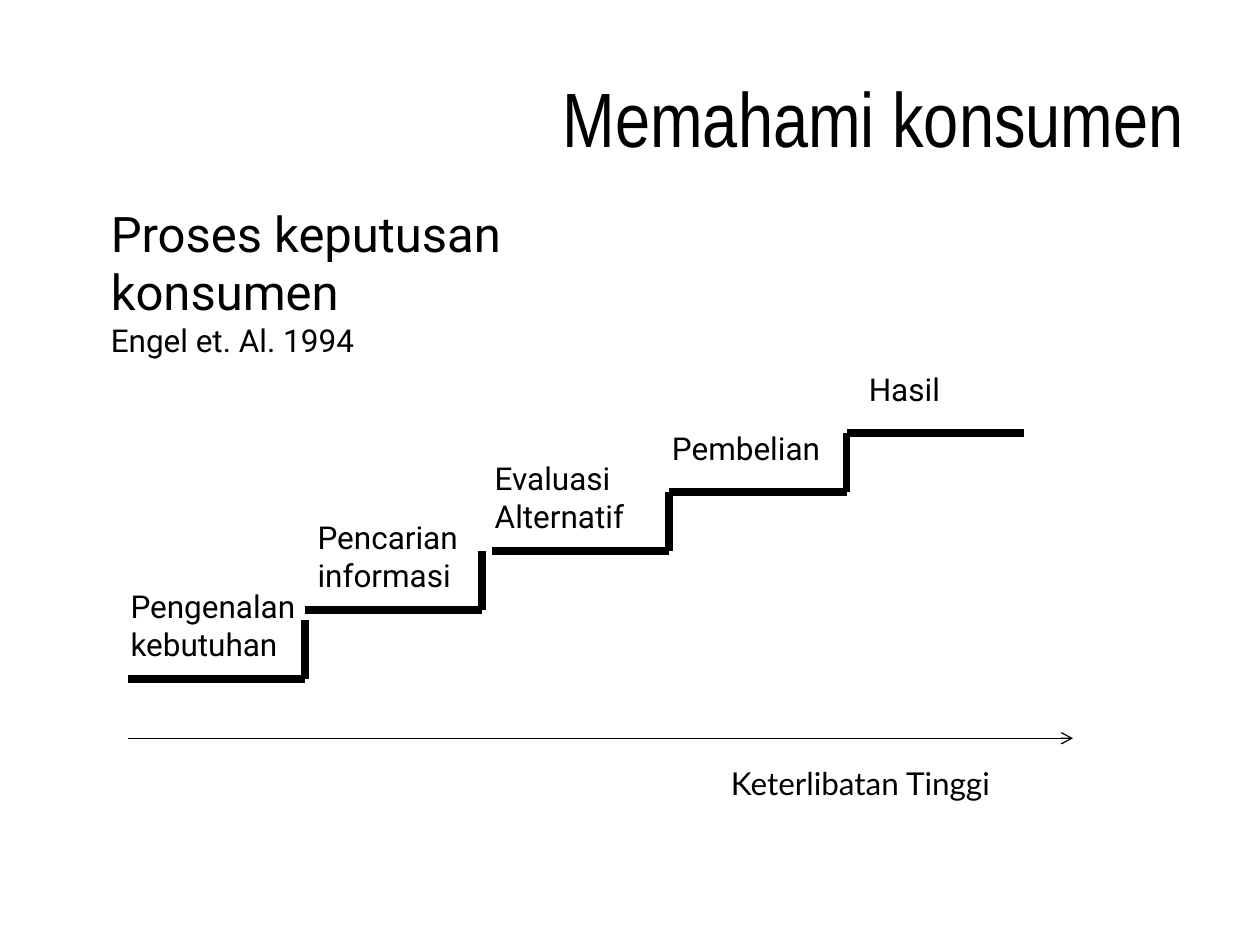
import dataclasses
from typing import NamedTuple

import pptx
import pptx.dml.color
import pptx.enum.shapes
import pptx.enum.text
import pptx.oxml
import pptx.oxml.ns
import pptx.util


@dataclasses.dataclass(frozen=True)
class Theme:
    ink: str = "000000"
    title_font: str = "Arial Narrow"
    body_font: str = "Roboto"
    axis_font: str = "Lato"
    title_size: float = 44
    heading_size: float = 28
    label_size: float = 18
    step_width: float = 4.5
    axis_width: float = 0.75


class Step(NamedTuple):
    """One stair: its label, and its tread and riser on the grid."""
    lines: tuple[str, ...]
    label_at: tuple[int, int]
    tread: tuple[int, int]
    level: int
    riser_top: int | None


THEME = Theme()
INK = pptx.dml.color.RGBColor.from_string(THEME.ink)
COLS = 128  # grid columns across the slide; rows use the same square cell
LABEL_COLS = 20

STEPS = (
    Step(("Pengenalan kebutuhan",), (12, 59), (13, 31), 69, 63),
    Step(("Pencarian informasi",), (31, 52), (31, 49), 62, 56),
    Step(("Evaluasi", "Alternatif"), (49, 46), (50, 68), 56, 50),
    Step(("Pembelian",), (67, 43), (68, 86), 50, 44),
    Step(("Hasil",), (87, 37), (86, 104), 44, None),
)

prs = pptx.Presentation()
prs.slide_width, prs.slide_height = pptx.util.Inches(10), pptx.util.Inches(7.5)
CELL = prs.slide_width / COLS


def grid(n: float) -> int:
    return round(n * CELL)


def write(p, text: str, font: str, size: float) -> None:
    r = p.add_run()
    r.text = text
    style = {"name": font, "size": pptx.util.Pt(size), "bold": False}
    for name, value in style.items():
        setattr(r.font, name, value)
    r.font.color.rgb = INK


def add_label(s, at: tuple[int, int], cols: int, rows: int,
              lines: list[tuple[str, str, float]]):
    """Add a text box with one paragraph for each (text, font, size)."""
    sp = s.shapes.add_textbox(*map(grid, (*at, cols, rows)))
    tf = sp.text_frame
    tf.word_wrap = True
    tf.auto_size = pptx.enum.text.MSO_AUTO_SIZE.SHAPE_TO_FIT_TEXT
    for i, line in enumerate(lines):
        p = tf.add_paragraph() if i else tf.paragraphs[0]
        write(p, *line)
    return sp


def add_line(s, start: tuple[int, int], end: tuple[int, int], width: float):
    sp = s.shapes.add_connector(pptx.enum.shapes.MSO_CONNECTOR.STRAIGHT,
                                *map(grid, (*start, *end)))
    sp.line.color.rgb = INK
    sp.line.width = pptx.util.Pt(width)
    pptx.oxml.ns.qn("a:effectLst")
    sp._element.spPr.append(pptx.oxml.parse_xml(
        f'<a:effectLst {pptx.oxml.ns.nsdecls("a")}/>'))
    return sp


def add_step(s, step: Step) -> None:
    add_label(s, step.label_at, LABEL_COLS, 5 if step.riser_top is None else 9,
              [(t, THEME.body_font, THEME.label_size) for t in step.lines])
    left, right = step.tread
    add_line(s, (left, step.level), (right, step.level), THEME.step_width)
    if step.riser_top is not None:
        # The riser stands under the start of the next tread
        foot = right
        add_line(s, (foot, step.riser_top), (foot, step.level), THEME.step_width)


def main() -> None:
    s = prs.slides.add_slide(prs.slide_layouts[5])

    # Title
    title = s.shapes.title
    box = {"left": 0.05 * prs.slide_width, "top": 0.04 * prs.slide_height,
           "width": 0.9 * prs.slide_width, "height": prs.slide_height / 6}
    for name, value in box.items():
        setattr(title, name, round(value))
    title.text_frame.vertical_anchor = pptx.enum.text.MSO_ANCHOR.MIDDLE
    p = title.text_frame.paragraphs[0]
    p.alignment = pptx.enum.text.PP_ALIGN.RIGHT
    write(p, "Memahami konsumen", THEME.title_font, THEME.title_size)

    # Heading with its reference
    add_label(s, (10, 20), 64, 17, [
        ("Proses keputusan konsumen", THEME.body_font, THEME.heading_size),
        ("Engel et. Al. 1994", THEME.body_font, THEME.label_size)])

    # Staircase
    for step in STEPS:
        add_step(s, step)

    # Involvement axis
    axis = add_line(s, (13, 75), (109, 75), THEME.axis_width)
    axis.line._get_or_add_ln().append(pptx.oxml.parse_xml(
        f'<a:tailEnd {pptx.oxml.ns.nsdecls("a")} type="arrow"/>'))
    add_label(s, (73, 77), 33, 5,
              [("Keterlibatan Tinggi", THEME.axis_font, THEME.label_size)])

    prs.save("out.pptx")


if __name__ == "__main__":
    main()
